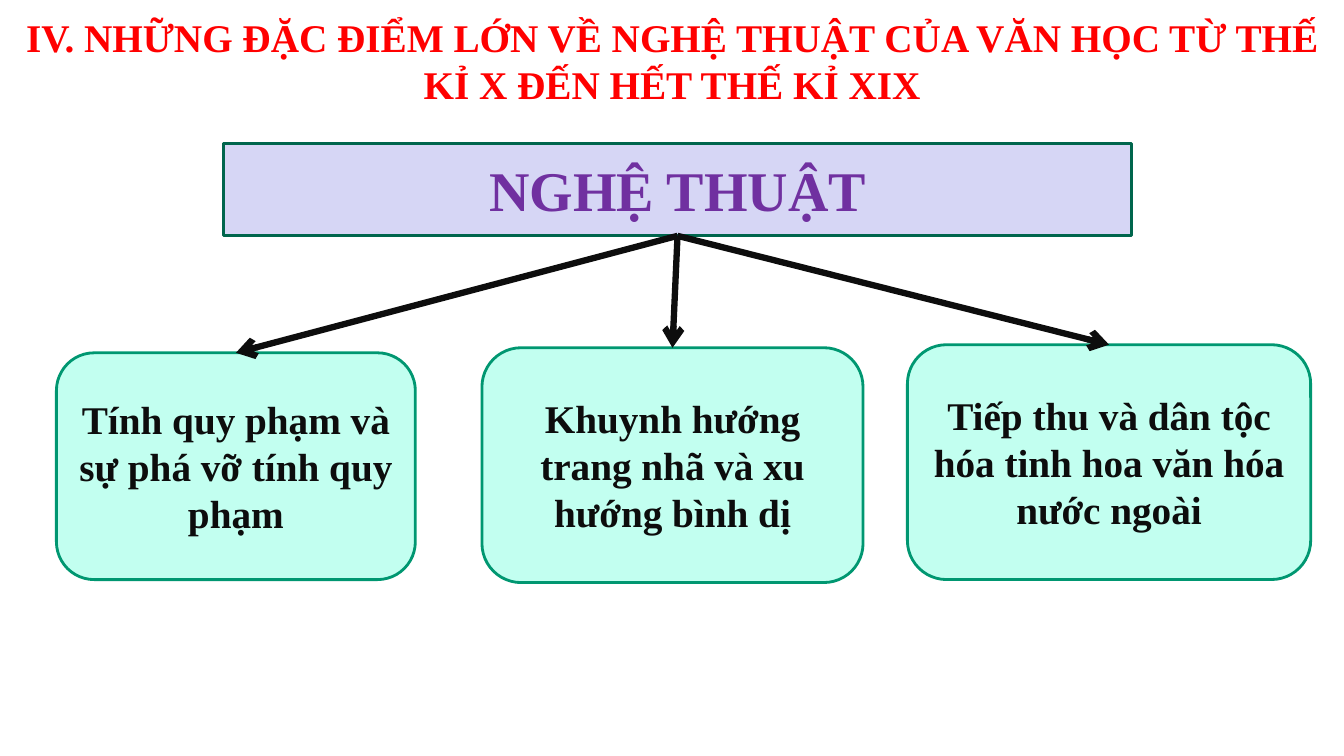
from dataclasses import dataclass

from lxml.etree import SubElement
from pptx import Presentation
from pptx.dml.color import RGBColor
from pptx.enum.shapes import MSO_CONNECTOR, MSO_SHAPE
from pptx.enum.text import MSO_ANCHOR, MSO_AUTO_SIZE, PP_ALIGN
from pptx.oxml.ns import qn
from pptx.shapes.autoshape import Shape
from pptx.slide import Slide
from pptx.util import Inches, Pt

COLORS = {
    "title": "FF0000",
    "header_fill": "D6D6F5",
    "header_line": "00664D",
    "header_text": "7030A0",
    "branch_fill": "C2FFF0",
    "branch_line": "009771",
    "dark": "0D0D0D",
}
FONT = "Times New Roman"
TOP_SITE, BOTTOM_SITE = 0, 2


@dataclass(frozen=True)
class Box:
    text: str
    left: float
    top: float
    width: float
    height: float
    geometry: MSO_SHAPE = MSO_SHAPE.FLOWCHART_ALTERNATE_PROCESS
    fill: str = "branch_fill"
    line: str = "branch_line"
    color: str = "dark"
    size: int = 28


TITLE = "IV. NHỮNG ĐẶC ĐIỂM LỚN VỀ NGHỆ THUẬT CỦA VĂN HỌC TỪ THẾ KỈ X ĐẾN HẾT THẾ KỈ XIX"
HEADER = Box("NGHỆ THUẬT", 2.22, 1.42, 9, 0.92, MSO_SHAPE.RECTANGLE,
             "header_fill", "header_line", "header_text", 40)
BRANCHES = (
    Box("Tính quy phạm và sự phá vỡ tính quy phạm", 0.56, 3.5, 3.56, 2.25),
    Box("Khuynh hướng trang nhã và xu hướng bình dị", 4.78, 3.45, 3.78, 2.33),
    Box("Tiếp thu và dân tộc hóa tinh hoa văn hóa nước ngoài", 9, 3.42, 4, 2.33),
)


def rgb(name: str) -> RGBColor:
    return RGBColor.from_string(COLORS[name])


def set_attributes(target: object, values: dict[str, object]) -> None:
    for name, value in values.items():
        setattr(target, name, value)


def write_text(shape: Shape, text: str, size: int, color: str, anchor: MSO_ANCHOR) -> None:
    frame = shape.text_frame
    frame.text = text
    set_attributes(frame, {
        "word_wrap": True,
        "auto_size": MSO_AUTO_SIZE.NONE,
        "vertical_anchor": anchor,
    })
    paragraph = frame.paragraphs[0]
    set_attributes(paragraph, {"alignment": PP_ALIGN.CENTER, "space_before": Pt(0)})
    font = paragraph.runs[0].font
    set_attributes(font, {"name": FONT, "size": Pt(size), "bold": True})
    font.color.rgb = rgb(color)


def add_title(slide: Slide) -> None:
    title = slide.shapes.title
    set_attributes(title, {
        "left": Inches(0),
        "top": Inches(0.08),
        "width": Inches(13.33),
        "height": Inches(1.04),
    })
    write_text(title, TITLE, 28, "title", MSO_ANCHOR.TOP)


def add_box(slide: Slide, box: Box) -> Shape:
    shape = slide.shapes.add_shape(
        box.geometry, Inches(box.left), Inches(box.top), Inches(box.width), Inches(box.height)
    )
    shape.shadow.inherit = False
    shape.fill.solid()
    shape.fill.fore_color.rgb = rgb(box.fill)
    shape.line.color.rgb = rgb(box.line)
    shape.line.width = Pt(2)
    write_text(shape, box.text, box.size, box.color, MSO_ANCHOR.MIDDLE)
    return shape


def add_arrow(slide: Slide, source: Shape, target: Shape) -> None:
    arrow = slide.shapes.add_connector(MSO_CONNECTOR.STRAIGHT, 0, 0, 0, 0)
    arrow.begin_connect(source, BOTTOM_SITE)
    arrow.end_connect(target, TOP_SITE)
    arrow.line.color.rgb = rgb("dark")
    arrow.line.width = Pt(4.5)
    properties = arrow._element.spPr
    SubElement(properties.find(qn("a:ln")), qn("a:tailEnd"), type="arrow")
    SubElement(properties, qn("a:effectLst"))


def main() -> None:
    presentation = Presentation()
    set_attributes(presentation, {"slide_width": Inches(13.33), "slide_height": Inches(7.5)})
    slide = presentation.slides.add_slide(presentation.slide_layouts.get_by_name("Title Only"))
    add_title(slide)
    header = add_box(slide, HEADER)
    branches = [add_box(slide, branch) for branch in BRANCHES]
    for branch in branches:
        add_arrow(slide, header, branch)
    presentation.save("out.pptx")


if __name__ == "__main__":
    main()
